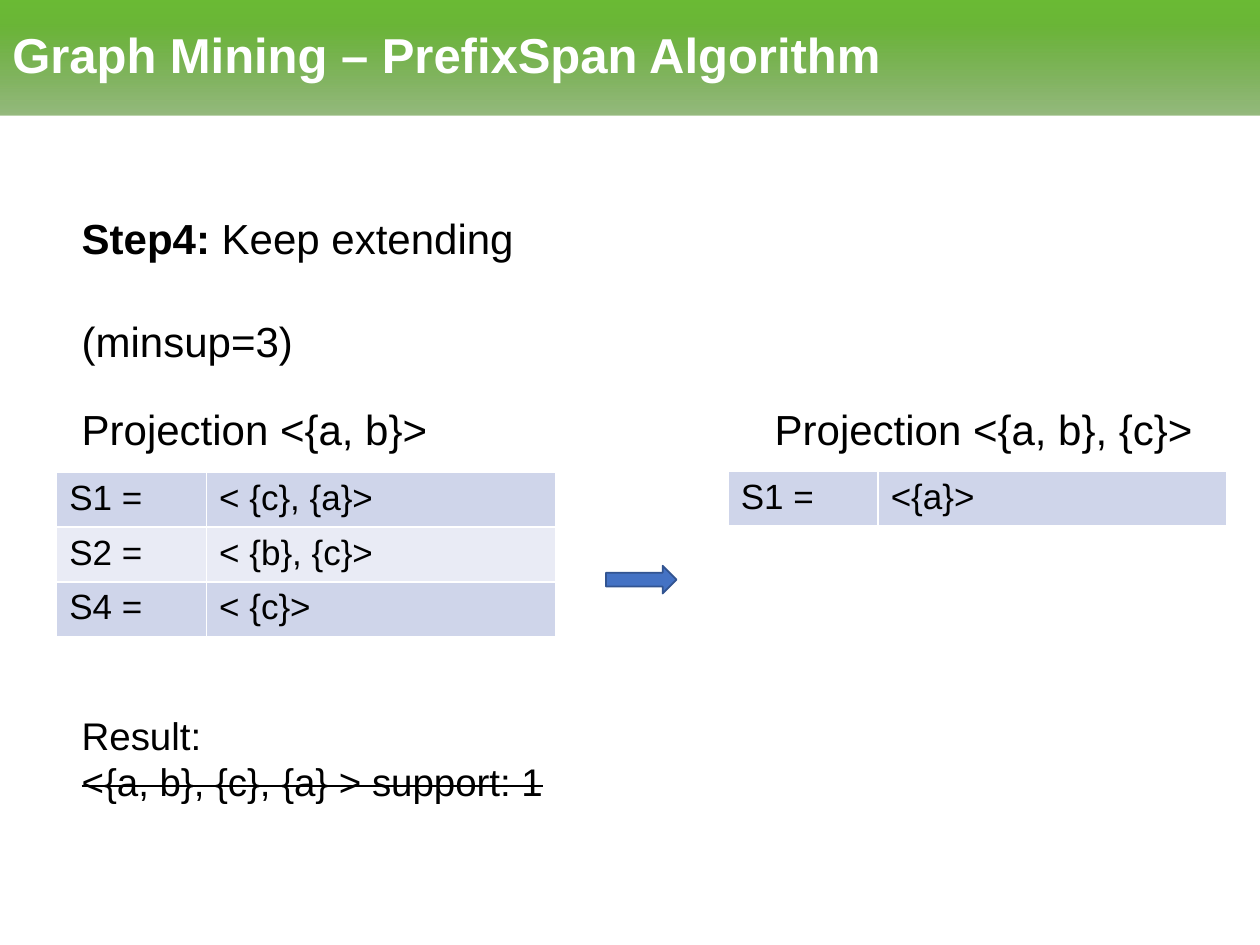
import pptx
import pptx.dml.color
import pptx.enum.shapes
import pptx.enum.text
import pptx.oxml
import pptx.oxml.ns
import pptx.util
from pptx.util import Inches

COLORS = {
    "text": "000000",
    "white": "FFFFFF",
    "banner_low": "518D2A",
    "banner_mid": "6AB636",
    "banner_top": "6ABA34",
    "band_dark": "CFD5EA",
    "band_light": "E9EBF5",
    "arrow": "4472C4",
    "arrow_edge": "325491",
}
NS = pptx.oxml.ns.nsdecls("a")


def rgb(name):
    return pptx.dml.color.RGBColor.from_string(COLORS[name])


class SlideBuilder:
    def __init__(self, slide, font="Arial"):
        self.slide = slide
        self.font = font

    def style(self, font, size, color="text", bold=False):
        font.name = self.font
        font.size = pptx.util.Pt(size)
        font.bold = bold
        font.color.rgb = rgb(color)

    def banner(self, title, height):
        """Full-width title bar, fading to a translucent lower edge."""
        bar = self.slide.shapes.add_shape(
            pptx.enum.shapes.MSO_SHAPE.RECTANGLE, 0, 0, Inches(10), Inches(height))
        bar.shadow.inherit = False
        bar.line.fill.background()
        bar.fill.gradient()
        bar.fill.gradient_angle = 90
        stops = pptx.oxml.parse_xml(
            f'<a:gsLst {NS}>'
            f'<a:gs pos="0"><a:srgbClr val="{COLORS["banner_low"]}">'
            f'<a:alpha val="60000"/></a:srgbClr></a:gs>'
            f'<a:gs pos="80000"><a:srgbClr val="{COLORS["banner_mid"]}"/></a:gs>'
            f'<a:gs pos="100000"><a:srgbClr val="{COLORS["banner_top"]}"/></a:gs>'
            f'</a:gsLst>')
        gradient = bar.element.spPr.find(pptx.oxml.ns.qn("a:gradFill"))
        gradient.replace(gradient.find(pptx.oxml.ns.qn("a:gsLst")), stops)
        gradient.find(pptx.oxml.ns.qn("a:lin")).set("ang", "16200000")

        bar.text_frame.vertical_anchor = pptx.enum.text.MSO_ANCHOR.MIDDLE
        heading = bar.text_frame.paragraphs[0]
        heading.text = title
        heading.alignment = pptx.enum.text.PP_ALIGN.LEFT
        heading.line_spacing = 0.9
        self.style(heading.font, 28, "white", bold=True)

    def text(self, top, height, lines, size, gap=0, tab=None):
        """Text box whose lines are gap points apart; returns its paragraphs."""
        box = self.slide.shapes.add_textbox(
            Inches(0.55), Inches(top), Inches(9.19), Inches(height))
        frame = box.text_frame
        frame.word_wrap = True
        for index, line in enumerate(lines):
            paragraph = frame.add_paragraph() if index else frame.paragraphs[0]
            paragraph.text = line
            if index:
                paragraph.space_before = pptx.util.Pt(gap)
            if tab:
                paragraph._p.get_or_add_pPr().append(pptx.oxml.parse_xml(
                    f'<a:tabLst {NS}><a:tab pos="{Inches(tab)}" algn="l"/></a:tabLst>'))
            self.style(paragraph.font, size)
        return frame.paragraphs

    def table(self, left, top, rows):
        column_widths, row_height = (1.19, 2.77), 0.43
        table = self.slide.shapes.add_table(
            len(rows), len(column_widths), Inches(left), Inches(top),
            Inches(sum(column_widths)), Inches(row_height * len(rows))).table
        table.first_row = table.horz_banding = False
        for column, width in zip(table.columns, column_widths):
            column.width = Inches(width)
        for row_index, values in enumerate(rows):
            table.rows[row_index].height = Inches(row_height)
            for column_index, value in enumerate(values):
                cell = table.cell(row_index, column_index)
                self.cell_borders(cell)
                cell.fill.solid()
                cell.fill.fore_color.rgb = rgb("band_light" if row_index % 2 else "band_dark")
                entry = cell.text_frame.paragraphs[0]
                entry.text = value
                self.style(entry.font, 20)

    def cell_borders(self, cell):
        properties = cell._tc.get_or_add_tcPr()
        for side in ("lnL", "lnR", "lnT", "lnB"):
            properties.append(pptx.oxml.parse_xml(
                f'<a:{side} {NS} w="{pptx.util.Pt(1)}"><a:solidFill>'
                f'<a:srgbClr val="{COLORS["white"]}"/></a:solidFill></a:{side}>'))

    def arrow(self, left, top, width, height):
        arrow = self.slide.shapes.add_shape(
            pptx.enum.shapes.MSO_SHAPE.RIGHT_ARROW,
            Inches(left), Inches(top), Inches(width), Inches(height))
        arrow.shadow.inherit = False
        arrow.fill.solid()
        arrow.fill.fore_color.rgb = rgb("arrow")
        arrow.line.color.rgb = rgb("arrow_edge")
        arrow.line.width = pptx.util.Pt(1)


def main():
    deck = pptx.Presentation()
    deck.slide_width, deck.slide_height = Inches(10), Inches(7.5)
    builder = SlideBuilder(deck.slides.add_slide(deck.slide_layouts[6]))

    builder.banner("Graph Mining – PrefixSpan Algorithm", 0.92)

    step, _ = builder.text(1.64, 1.72, ["Step4: ", "(minsup=3)"], 24, gap=30)
    step.runs[0].font.bold = True
    step.add_run().text = "Keep extending"

    _, pruned = builder.text(
        5.6, 0.84, ["Result:", "<{a, b}, {c}, {a} > support: 1"], 22)
    pruned.runs[0].font._element.set("strike", "sngStrike")

    builder.text(3.15, 0.91, ["Projection <{a, b}>\tProjection <{a, b}, {c}>"], 24, tab=5.5)

    builder.table(5.78, 3.74, [("S1 =", "<{a}>")])
    builder.arrow(4.81, 4.49, 0.56, 0.22)
    builder.table(0.45, 3.75, [
        ("S1 =", "< {c}, {a}>"),
        ("S2 =", "< {b}, {c}>"),
        ("S4 =", "< {c}>"),
    ])

    deck.save("out.pptx")


if __name__ == "__main__":
    main()
